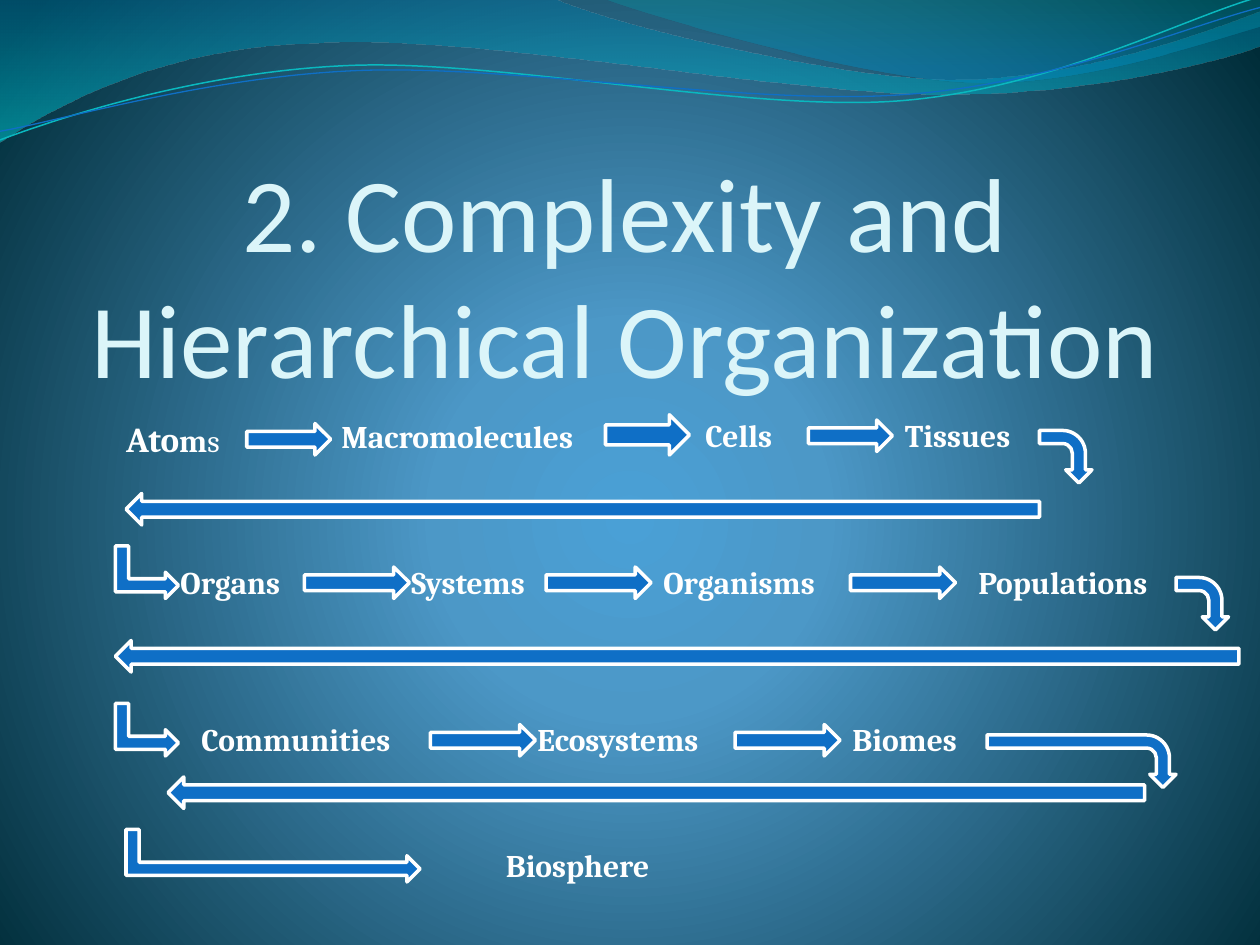
from lxml.etree import SubElement
from pptx import Presentation
from pptx.dml.color import RGBColor
from pptx.enum.shapes import MSO_SHAPE
from pptx.enum.text import MSO_ANCHOR, MSO_AUTO_SIZE, PP_ALIGN
from pptx.oxml.ns import qn
from pptx.util import Pt

COLORS = {
    "title": "DBF5F9", "white": "FFFFFF", "arrow": "0F6FC6", "teal": "0AB8BF",
    "glow": "4AA0D6", "sky": "4C98C7", "night": "002C38",
    "wave_blue": "0074A1", "wave_cyan": "00C6CF",
    "crest_green": "00A1A9", "crest_blue": "008BBF",
}

WAVE = [(0, 0), (316.8, -0.7), (342.7, 12.2, 478.1, 45.4, 545.8, 45.4),
        (614.2, 45.4, 689.8, 18.7, 720, 6.5), (720.7, 25.9),
        (707.8, 31.7, 626.4, 54.7, 537.1, 54), (447.8, 54, 275, 20.2, 185, 24.5),
        (92.9, 25.9, 33.1, 59.8, -0.7, 81.4), (0, 0)]
CREST = [(344.9, -0.7), (366.5, 7.9, 491, 44.6, 553.7, 46.8),
         (616.3, 49.7, 691.9, 23, 720, 15.1), (720, 0), (344.9, -0.7)]
TEAL_LINE = [(-1.4, 63), (33.8, 51.7, 114.1, 29.4, 199.8, 29.9),
             (284.9, 30.3, 425.9, 67.3, 512.5, 64.9),
             (599.1, 62.4, 676.5, 25.7, 720.2, 15.5)]
BLUE_LINE = [(-1.1, 58), (32.9, 53.8, 118.3, 32.5, 204.1, 33),
             (290.5, 33.4, 428.9, 63.8, 515.5, 61.4),
             (601.4, 59.6, 678.4, 30.1, 721.4, 21.3)]

LABELS = [
    ("Macromolecules", 188, 235, 156), ("Cells", 396, 234, 72), ("Tissues", 510, 234, 96),
    ("Organs", 96, 318, 84), ("Systems", 228, 318, 90),
    ("Organisms", 372, 318, 114), ("Populations", 552, 318, 126),
    ("Communities", 108, 408, 138), ("Ecosystems", 300, 408, 120),
    ("Biomes", 480, 408, 84), ("Biosphere", 282, 480, 108),
]
RIGHT_ARROWS = [
    (346, 237, 48, 23), (141, 242, 48, 18), (462, 240, 48, 18),
    (174, 324, 60, 18), (312, 324, 60, 18), (486, 324, 60, 18),
    (246, 414, 60, 18), (420, 414, 60, 18),
]
RETURN_ARROWS = [(72, 282, 522, 18), (66, 366, 642, 18), (96, 444, 558, 18)]
ROW_END_ARROWS = [(594, 246, 30, 30), (672, 330, 30, 30), (603, 381, 30, 108)]
ROW_START_ARROWS = [(69, 309, 30, 36), (69, 399, 30, 36), (141, 405, 30, 168)]


def rgb(name):
    """Return the named colour."""
    return RGBColor.from_string(COLORS[name])


def fill_gradient(fill, element, stops, center=None):
    """Set a vertical gradient, or a circular one around the center rectangle."""
    fill.gradient()
    gradient = element.find(".//" + qn("a:gradFill"))
    for child in list(gradient):
        gradient.remove(child)
    stop_list = SubElement(gradient, qn("a:gsLst"))
    for position, name, opacity in stops:
        stop = SubElement(stop_list, qn("a:gs"), pos=str(position * 1000))
        color = SubElement(stop, qn("a:srgbClr"), val=COLORS[name])
        if opacity < 100:
            SubElement(color, qn("a:alpha"), val=str(opacity * 1000))
    if center:
        circle = SubElement(gradient, qn("a:path"), path="circle")
        sides = {side: str(value * 1000) for side, value in zip("ltrb", center)}
        SubElement(circle, qn("a:fillToRect"), **sides)
    else:
        SubElement(gradient, qn("a:lin"), ang="5400000", scaled="0")


def add_freeform(slide, outline, close):
    """Add an outline of corners and cubic curves without shadow."""
    ends = [(Pt(part[-2]), Pt(part[-1])) for part in outline]
    builder = slide.shapes.build_freeform(*ends[0])
    builder.add_line_segments(ends[1:], close=close)
    shape = builder.convert_to_shape()
    shape.shadow.inherit = False
    left, top = shape.left, shape.top
    segments = list(shape._element.iter(qn("a:lnTo")))
    for segment, part in zip(segments, outline[1:]):
        if len(part) == 6:
            curve = SubElement(segment.getparent(), qn("a:cubicBezTo"))
            for x, y in zip(part[::2], part[1::2]):
                SubElement(curve, qn("a:pt"), x=str(Pt(x) - left), y=str(Pt(y) - top))
            segment.getparent().replace(segment, curve)
    return shape


def add_wave(slide, outline, stops):
    """Add a translucent wave."""
    shape = add_freeform(slide, outline, True)
    fill_gradient(shape.fill, shape._element, stops)
    shape.line.fill.background()


def add_wave_line(slide, outline, color, width):
    """Add a thin curved line, tilted slightly."""
    shape = add_freeform(slide, outline, False)
    shape.rotation = 357.3
    shape.fill.background()
    shape.line.color.rgb = rgb(color)
    shape.line.width = Pt(width)


def add_arrow(slide, kind, box, rotation=0):
    """Add a block arrow."""
    shape = slide.shapes.add_shape(kind, *map(Pt, box))
    shape.rotation = rotation
    shape.shadow.inherit = False
    shape.fill.solid()
    shape.fill.fore_color.rgb = rgb("arrow")
    shape.line.color.rgb = rgb("white")
    shape.line.width = Pt(2)


def add_run(paragraph, text, size=18, font="Cambria", color="white", bold=True):
    """Add formatted text to a paragraph."""
    run = paragraph.add_run()
    run.text = text
    run.font.size = Pt(size)
    run.font.name = font
    run.font.bold = bold
    run.font.color.rgb = rgb(color)


def add_text_frame(slide, left, top, width, height=29):
    """Add an empty wrapping text box and return its frame."""
    frame = slide.shapes.add_textbox(Pt(left), Pt(top), Pt(width), Pt(height)).text_frame
    frame.word_wrap = True
    frame.auto_size = MSO_AUTO_SIZE.SHAPE_TO_FIT_TEXT
    return frame


def add_title(slide, text):
    """Add the slide title, growing upward from its bottom edge."""
    frame = add_text_frame(slide, 30, 138, 654, 90)
    frame.auto_size = MSO_AUTO_SIZE.NONE
    frame.vertical_anchor = MSO_ANCHOR.BOTTOM
    frame.margin_left = frame.margin_right = frame.margin_bottom = 0
    paragraph = frame.paragraphs[0]
    paragraph.alignment = PP_ALIGN.CENTER
    add_run(paragraph, text, size=60, font="Calibri", color="title", bold=False)


def add_backdrop(slide):
    """Paint the background and the waves at the top."""
    fill_gradient(slide.background.fill, slide._element,
                  [(0, "glow", 100), (25, "sky", 100), (100, "night", 100)],
                  center=(10, 110, 10, 100))
    add_wave(slide, WAVE, [(0, "wave_blue", 45), (100, "wave_cyan", 55)])
    add_wave(slide, CREST, [(0, "crest_green", 30), (80, "crest_blue", 45)])
    add_wave_line(slide, TEAL_LINE, "teal", 0.85)
    add_wave_line(slide, BLUE_LINE, "arrow", 0.75)


def main():
    """Build the slide."""
    presentation = Presentation()
    presentation.slide_width, presentation.slide_height = Pt(720), Pt(540)
    slide = presentation.slides.add_slide(presentation.slide_layouts[6])
    add_backdrop(slide)
    add_title(slide, "2. Complexity and Hierarchical Organization")
    atoms = add_text_frame(slide, 65, 235, 90, 32).paragraphs[0]
    add_run(atoms, "Ato", size=20)
    add_run(atoms, "m")
    add_run(atoms, "s", bold=False)
    for text, left, top, width in LABELS:
        add_run(add_text_frame(slide, left, top, width).paragraphs[0], text)
    for kind, boxes, rotation in (
        (MSO_SHAPE.RIGHT_ARROW, RIGHT_ARROWS, 0),
        (MSO_SHAPE.LEFT_ARROW, RETURN_ARROWS, 0),
        (MSO_SHAPE.BENT_ARROW, ROW_END_ARROWS, 90),
        (MSO_SHAPE.BENT_UP_ARROW, ROW_START_ARROWS, 90),
    ):
        for box in boxes:
            add_arrow(slide, kind, box, rotation)
    presentation.save("out.pptx")


if __name__ == "__main__":
    main()
